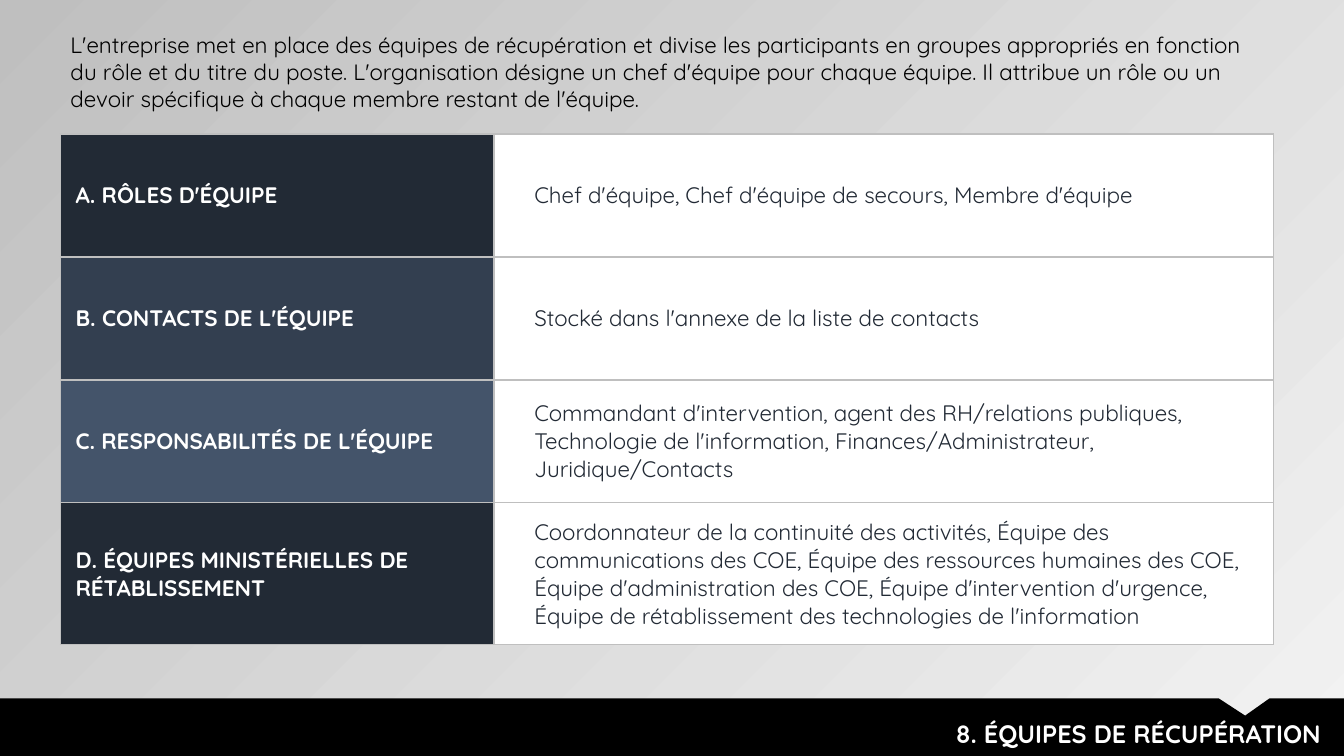
from pptx import Presentation
from pptx.dml.color import RGBColor
from pptx.enum.text import MSO_ANCHOR, MSO_AUTO_SIZE, PP_ALIGN
from pptx.oxml import parse_xml
from pptx.oxml.ns import nsdecls
from pptx.util import Pt

PX = 9144
FONT = "Quicksand"
WHITE, BLACK, GREY, NAVY = "FFFFFF", "000000", "BFBFBF", "222A35"
INTRO = (
    "L'entreprise met en place des équipes de récupération et divise les participants "
    "en groupes appropriés en fonction du rôle et du titre du poste. L'organisation "
    "désigne un chef d'équipe pour chaque équipe. Il attribue un rôle ou un devoir "
    "spécifique à chaque membre restant de l'équipe."
)
TEAMS = [
    ("A. RÔLES D'ÉQUIPE", NAVY,
     "Chef d'équipe, Chef d'équipe de secours, Membre d'équipe"),
    ("B. CONTACTS DE L'ÉQUIPE", "333F50",
     "Stocké dans l'annexe de la liste de contacts"),
    ("C. RESPONSABILITÉS DE L'ÉQUIPE", "44546A",
     "Commandant d'intervention, agent des RH/relations publiques, Technologie de "
     "l'information, Finances/Administrateur, Juridique/Contacts"),
    ("D. ÉQUIPES MINISTÉRIELLES DE RÉTABLISSEMENT", NAVY,
     "Coordonnateur de la continuité des activités, Équipe des communications des COE, "
     "Équipe des ressources humaines des COE, Équipe d'administration des COE, Équipe "
     "d'intervention d'urgence, Équipe de rétablissement des technologies de l'information"),
]


def px(*lengths):
    return [n * PX for n in lengths]


def rgb(value):
    return RGBColor.from_string(value)


def paint(fill, color):
    fill.solid()
    fill.fore_color.rgb = rgb(color)


def write(tf, text, size, color, bold=False, align=PP_ALIGN.LEFT):
    tf.word_wrap = True
    p = tf.paragraphs[0]
    p.text = text
    p.alignment = align
    p.font.name = FONT
    p.font.size = Pt(size)
    p.font.bold = bold
    p.font.color.rgb = rgb(color)


def add_background(s):
    fill = s.background.fill
    fill.gradient()
    fill.gradient_angle = 135
    for stop, color in zip(fill.gradient_stops, ("F2F2F2", GREY)):
        stop.color.rgb = rgb(color)


def add_intro(s, x, y, w, h):
    tf = s.shapes.add_textbox(*px(x, y, w, h)).text_frame
    write(tf, INTRO, 16, BLACK)
    tf.auto_size = MSO_AUTO_SIZE.SHAPE_TO_FIT_TEXT


def format_cell(cell, text, fill, color, bold, left):
    for side in "LRTB":
        cell._tc.get_or_add_tcPr().append(parse_xml(
            f'<a:ln{side} {nsdecls("a")} w="{Pt(1)}"><a:solidFill>'
            f'<a:srgbClr val="{GREY}"/></a:solidFill></a:ln{side}>'))
    paint(cell.fill, fill)
    cell.vertical_anchor = MSO_ANCHOR.MIDDLE
    cell.margin_left, cell.margin_right = px(left, 15)
    cell.margin_top, cell.margin_bottom = px(15, 15)
    write(cell.text_frame, text, 16, color, bold)


def add_teams(s, x, y, w, h):
    table = s.shapes.add_table(len(TEAMS), 2, *px(x, y, w, h)).table
    table.first_row = table.horz_banding = False
    table.columns[0].width, table.columns[1].width = px(430, w - 430)
    for i, (label, fill, detail) in enumerate(TEAMS):
        format_cell(table.cell(i, 0), label, fill, WHITE, True, 15)
        format_cell(table.cell(i, 1), detail, WHITE, NAVY, False, 40)


def add_footer(s, x, y, w, h):
    builder = s.shapes.build_freeform(x, y, scale=PX)
    builder.add_line_segments([
        (x + w - 124, y), (x + w - 98, y + 17), (x + w - 74, y),
        (x + w, y), (x + w, y + h), (x, y + h),
    ])
    band = builder.convert_to_shape()
    band.shadow.inherit = False
    paint(band.fill, BLACK)
    band.line.fill.background()

    title = s.shapes.title
    title.left, title.top, title.width, title.height = px(x + w - 919, y + 15, 906, 40)
    tf = title.text_frame
    write(tf, "8. ÉQUIPES DE RÉCUPÉRATION", 18, WHITE, True, PP_ALIGN.RIGHT)
    tf.vertical_anchor = MSO_ANCHOR.TOP
    tf.auto_size = MSO_AUTO_SIZE.SHAPE_TO_FIT_TEXT
    band.element.addnext(title.element)


def main():
    prs = Presentation()
    prs.slide_width, prs.slide_height = px(1333, 750)
    s = prs.slides.add_slide(prs.slide_layouts[5])
    add_background(s)
    add_teams(s, 60, 133, 1203, 488)
    add_footer(s, 0, 693, 1333, 57)
    add_intro(s, 60, 26, 1203, 91)
    prs.save("out.pptx")


if __name__ == "__main__":
    main()
